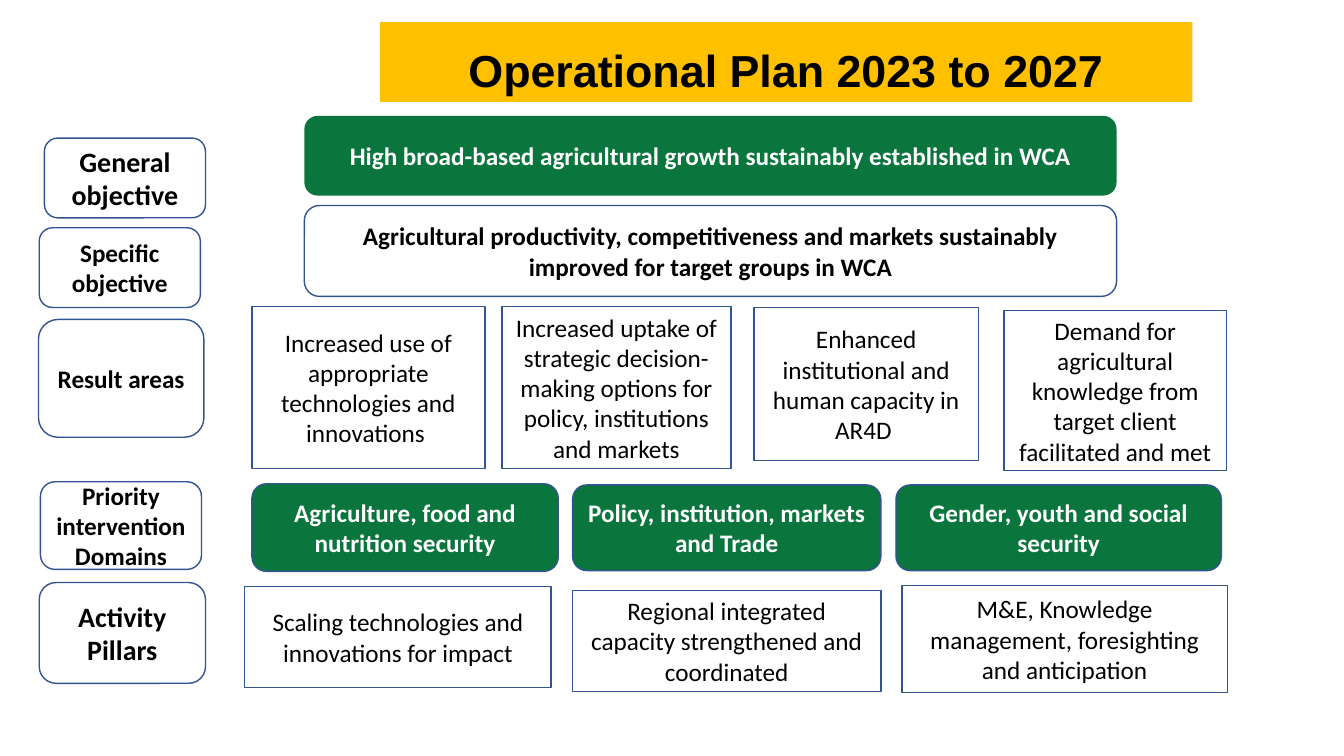
import pptx
import pptx.util
import pptx.dml.color
import pptx.enum.shapes
import pptx.enum.text

Cm = pptx.util.Cm
Pt = pptx.util.Pt
SHAPES = pptx.enum.shapes.MSO_SHAPE

GREEN, GOLD, BLUE = "0A753C", "FFC000", "325491"
WHITE, BLACK = "FFFFFF", "000000"


def colour(value):
    return pptx.dml.color.RGBColor.from_string(value)


class PlanPage:
    """Holds the style and the current slide; places are left, top, width, height in cm."""

    font, size = "Calibri", 18

    def __init__(self, deck):
        self.page = deck.slides.add_slide(deck.slide_layouts[6])

    def box(self, place, text, kind=SHAPES.RECTANGLE, fill=None, line=BLUE,
            ink=BLACK, bold=False, size=None, font=None):
        box = self.page.shapes.add_shape(kind, *map(Cm, place))
        box.shadow.inherit = False
        if fill:
            box.fill.solid()
            box.fill.fore_color.rgb = colour(fill)
        else:
            box.fill.background()
        if line:
            box.line.color.rgb = colour(line)
            box.line.width = Pt(1)
        else:
            box.line.fill.background()
        frame = box.text_frame
        frame.word_wrap = True
        frame.vertical_anchor = pptx.enum.text.MSO_ANCHOR.MIDDLE
        frame.text = text
        for para in frame.paragraphs:
            para.alignment = pptx.enum.text.PP_ALIGN.CENTER
            para.font.name = font or self.font
            para.font.size = Pt(size or self.size)
            para.font.bold = bold
            para.font.color.rgb = colour(ink)
        return box

    def title(self, place, text):
        banner = self.box(place, text, fill=GOLD, line=None, bold=True, size=32, font="Arial")
        banner.text_frame.margin_top = Cm(0.5)

    def rounded(self, place, text, **style):
        self.box(place, text, kind=SHAPES.ROUNDED_RECTANGLE, bold=True, **style)

    def green(self, place, text, line=BLUE):
        self.rounded(place, text, fill=GREEN, line=line, ink=WHITE)

    def label(self, place, text, size):
        self.rounded(place, text, fill=WHITE, size=size)


RESULT_AREAS = [
    ((6.35, 7.72, 5.87, 4.09),
     "Increased use of appropriate technologies and innovations "),
    ((12.65, 7.72, 5.77, 4.09),
     "Increased uptake of strategic decision-making options for policy, institutions and markets"),
    ((19, 7.75, 5.66, 3.86),
     "Enhanced institutional and human capacity in AR4D "),
    ((25.3, 7.82, 5.61, 4.04),
     "Demand for agricultural knowledge from target client facilitated and met"),
]
DOMAINS = [
    ((6.35, 12.19, 7.72, 2.21), "Agriculture, food and nutrition security"),
    ((14.43, 12.22, 7.77, 2.16), "Policy, institution, markets and Trade"),
    ((22.58, 12.22, 8.2, 2.16), "Gender, youth and social security"),
]
PILLARS = [
    ((6.17, 14.78, 7.72, 2.54), "Scaling technologies and innovations for impact"),
    ((14.43, 14.88, 7.77, 2.54), "Regional integrated capacity strengthened and coordinated"),
    ((22.73, 14.76, 8.2, 2.69), "M&E, Knowledge management, foresighting and anticipation"),
]
LABELS = [
    ((1.12, 3.48, 4.06, 2.01), "General objective", 20),
    ((0.99, 5.74, 4.06, 2.01), "Specific objective", 18),
    ((0.97, 8.05, 4.17, 2.97), "Result areas", 18),
    ((1.02, 12.14, 4.06, 2.21), "Priority intervention Domains", 18),
    ((0.99, 14.68, 4.19, 2.54), "Activity\nPillars", 20),
]


def main():
    deck = pptx.Presentation()
    deck.slide_width, deck.slide_height = Cm(33.87), Cm(19.05)
    plan = PlanPage(deck)

    plan.title((9.58, 0.56, 20.47, 2.01), "Operational Plan 2023 to 2027")
    plan.green((7.67, 2.92, 20.47, 2.01),
               "High broad-based agricultural growth sustainably established in WCA", line=None)
    plan.rounded((7.67, 5.18, 20.47, 2.29),
                 "Agricultural productivity, competitiveness and markets sustainably "
                 "improved for target groups in WCA")
    for place, text in RESULT_AREAS:
        plan.box(place, text)
    for place, text in DOMAINS:
        plan.green(place, text)
    for place, text in PILLARS:
        plan.box(place, text)
    for place, text, size in LABELS:
        plan.label(place, text, size)

    deck.save("out.pptx")


if __name__ == "__main__":
    main()
